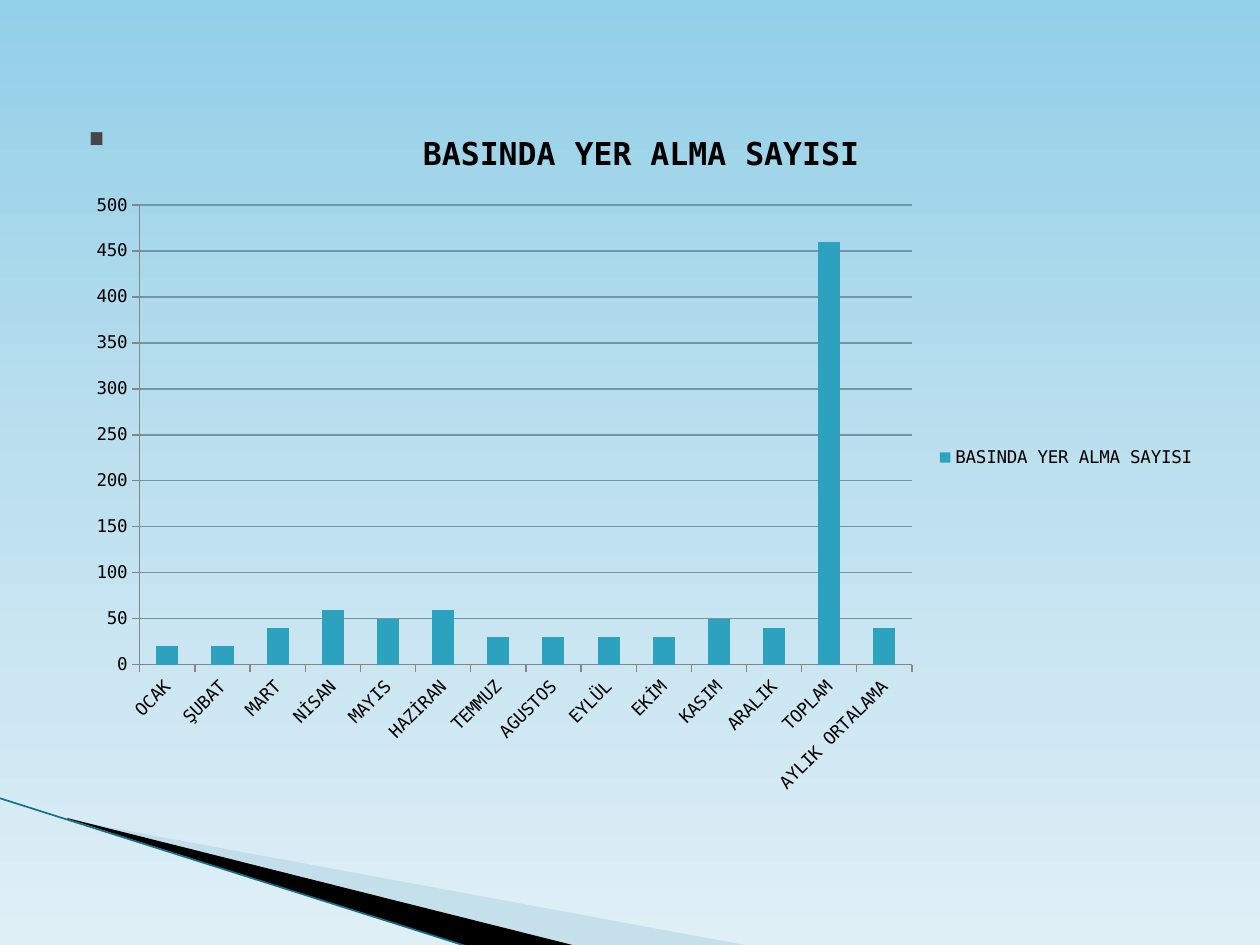
"""Builds a slide with a column chart of monthly press appearances."""
from lxml.etree import SubElement
from pptx import Presentation
from pptx.chart.data import CategoryChartData
from pptx.dml.color import RGBColor
from pptx.enum.chart import XL_CHART_TYPE as ChartType
from pptx.enum.chart import XL_LEGEND_POSITION as LegendPosition
from pptx.enum.chart import XL_TICK_MARK as TickMark
from pptx.enum.shapes import MSO_CONNECTOR as Connector
from pptx.enum.text import MSO_ANCHOR as Anchor
from pptx.enum.text import MSO_AUTO_SIZE as AutoSize
from pptx.enum.text import PP_ALIGN as Align
from pptx.oxml import parse_xml
from pptx.oxml.ns import nsdecls, qn
from pptx.util import Pt

PX = 914400 / 126
FONT = "DejaVu Sans Mono"
BLACK = RGBColor(0x00, 0x00, 0x00)
TITLE_GRAY = RGBColor(0x46, 0x46, 0x46)
TEAL = RGBColor(0x2D, 0xA2, 0xBF)
EDGE_TEAL = RGBColor(0x16, 0x70, 0x8C)
PALE_BLUE = RGBColor(0xA0, 0xCB, 0xDC)
AXIS_GRAY = RGBColor(0x86, 0x86, 0x86)
GRID_BLUE = RGBColor(0x70, 0x96, 0xA6)
SKY = [
    (0, RGBColor(0x92, 0xCF, 0xE8)),
    (50, RGBColor(0xBD, 0xE0, 0xEF)),
    (100, RGBColor(0xDF, 0xEF, 0xF6)),
]

TITLE = "."
TITLE_BOX = (63, 38, 1134, 157)
CHART_BOX = (74, 106, 1134, 703)
PLOT_BOX = (140, 205, 772, 460)
SERIES = "BASINDA YER ALMA SAYISI"
COUNTS = {
    "OCAK": 20, "ŞUBAT": 20, "MART": 40, "NİSAN": 60, "MAYIS": 50,
    "HAZİRAN": 60, "TEMMUZ": 30, "AGUSTOS": 30, "EYLÜL": 30, "EKİM": 30,
    "KASIM": 50, "ARALIK": 40, "TOPLAM": 460, "AYLIK ORTALAMA": 40,
}
WEDGES = [
    ([(69, 820), (750, 946), (575, 946), (69, 819)], PALE_BLUE, 40),
    ([(67, 818), (576, 946), (469, 947), (68, 819)], BLACK, 100),
]
EDGE = (-1, 798, 469, 947)


def px(*lengths):
    return [round(length * PX) for length in lengths]


def style_font(font, size, color=BLACK, bold=False):
    font.name, font.size, font.bold = FONT, Pt(size), bold
    font.color.rgb = color


def paint_background(page):
    fill = page.background.fill
    fill.gradient()
    fill.gradient_angle = 270
    stops = page._element.find(".//" + qn("a:gsLst"))
    for stop in list(stops):
        stops.remove(stop)
    for position, color in SKY:
        stop = SubElement(stops, qn("a:gs"), pos=str(position * 1000))
        SubElement(stop, qn("a:srgbClr"), val=str(color))


def add_wedge(page, points, color, opacity):
    builder = page.shapes.build_freeform(*points[0], scale=PX)
    builder.add_line_segments(points[1:], close=True)
    wedge = builder.convert_to_shape()
    wedge.shadow.inherit = False
    wedge.fill.solid()
    wedge.fill.fore_color.rgb = color
    wedge.line.fill.background()
    if opacity < 100:
        tint = wedge._element.spPr.find(".//" + qn("a:srgbClr"))
        SubElement(tint, qn("a:alpha"), val=str(opacity * 1000))


def add_edge(page):
    edge = page.shapes.add_connector(Connector.STRAIGHT, *px(*EDGE))
    edge.line.color.rgb = EDGE_TEAL
    edge.line.width = Pt(0.95)
    SubElement(edge._element.spPr, qn("a:effectLst"))


def fill_title(page):
    box = page.shapes.title
    box.left, box.top, box.width, box.height = px(*TITLE_BOX)
    frame = box.text_frame
    frame.auto_size = AutoSize.NONE
    frame.vertical_anchor = Anchor.MIDDLE
    para = frame.paragraphs[0]
    para.alignment = Align.LEFT
    span = para.add_run()
    span.text = TITLE
    style_font(span.font, 41, TITLE_GRAY, bold=True)


def place_plot(chart):
    left, top, width, height = CHART_BOX
    x, y, w, h = PLOT_BOX
    shares = {"x": (x - left) / width, "y": (y - top) / height,
              "w": w / width, "h": h / height}
    modes = '<c:layoutTarget val="inner"/><c:xMode val="edge"/><c:yMode val="edge"/>'
    sizes = "".join(f'<c:{key} val="{share:.3f}"/>' for key, share in shares.items())
    area = chart._chartSpace.find(".//" + qn("c:plotArea"))
    for layout in area.findall(qn("c:layout")):
        area.remove(layout)
    area.insert(0, parse_xml(
        f'<c:layout {nsdecls("c")}><c:manualLayout>{modes}{sizes}'
        "</c:manualLayout></c:layout>"))


def add_counts_chart(page):
    data = CategoryChartData()
    data.categories = list(COUNTS)
    data.add_series(SERIES, list(COUNTS.values()))
    chart = page.shapes.add_chart(
        ChartType.COLUMN_CLUSTERED, *px(*CHART_BOX), data).chart
    style_font(chart.font, 10)

    chart.has_title = True
    span = chart.chart_title.text_frame.paragraphs[0].add_run()
    span.text = SERIES
    style_font(span.font, 18, bold=True)
    chart.has_legend = True
    chart.legend.position = LegendPosition.RIGHT
    chart.legend.include_in_layout = False
    style_font(chart.legend.font, 10)

    plot = chart.plots[0]
    plot.vary_by_categories = False
    plot.gap_width = 150
    bars = plot.series[0].format.fill
    bars.solid()
    bars.fore_color.rgb = TEAL

    for axis in (chart.category_axis, chart.value_axis):
        axis.major_tick_mark = TickMark.OUTSIDE
        axis.format.line.color.rgb = AXIS_GRAY
        style_font(axis.tick_labels.font, 10)
    labels = chart.category_axis._element.find(qn("c:txPr"))
    labels.find(qn("a:bodyPr")).set("rot", "-2700000")
    values = chart.value_axis
    values.minimum_scale, values.maximum_scale, values.major_unit = 0, 500, 50
    values.has_major_gridlines = True
    values.major_gridlines.format.line.color.rgb = GRID_BLUE
    place_plot(chart)


def main():
    deck = Presentation()
    deck.slide_width, deck.slide_height = px(1260, 945)
    page = deck.slides.add_slide(deck.slide_layouts[5])
    paint_background(page)
    for wedge in WEDGES:
        add_wedge(page, *wedge)
    add_edge(page)
    fill_title(page)
    add_counts_chart(page)
    deck.save("out.pptx")


if __name__ == "__main__":
    main()
